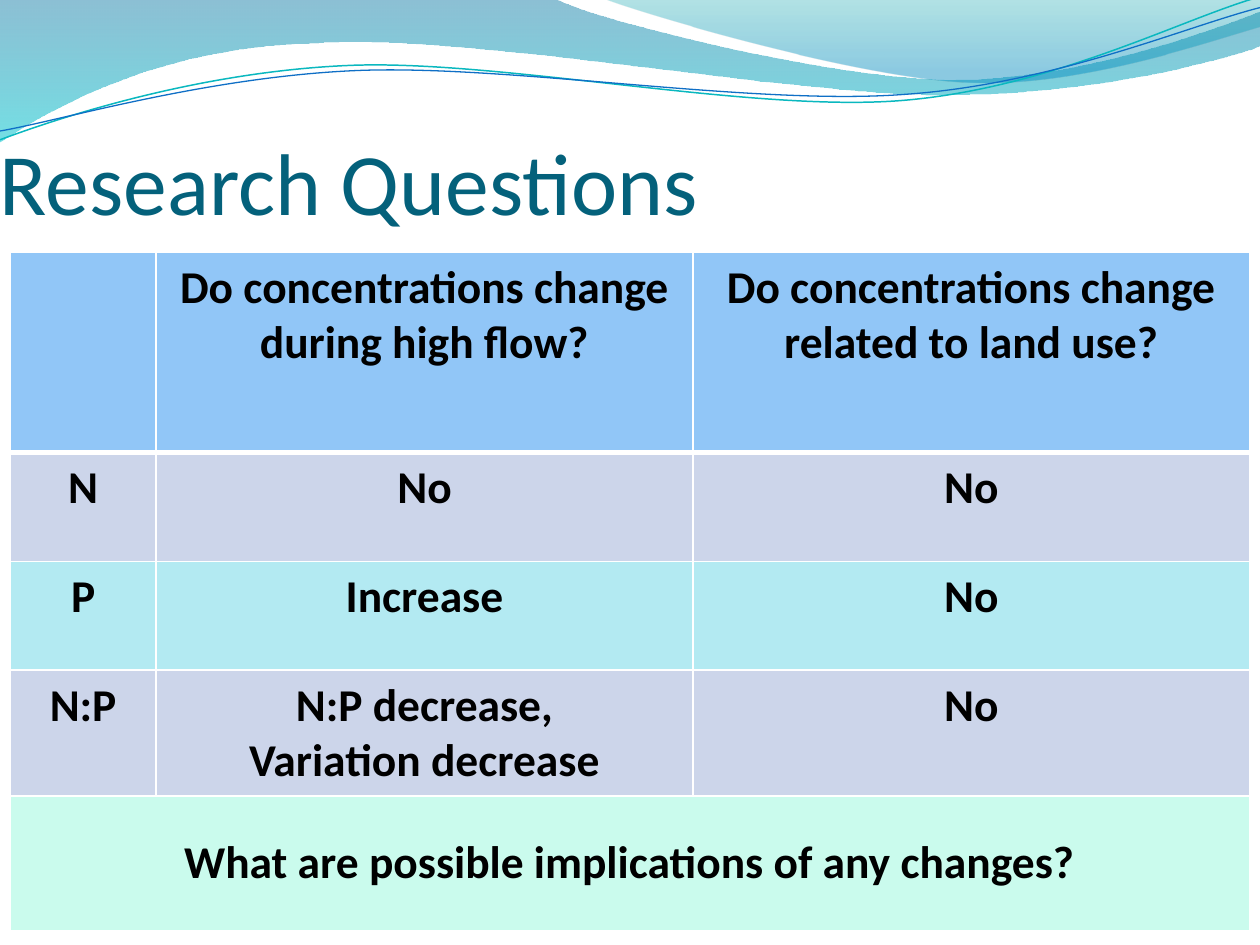
import math
from dataclasses import dataclass
from typing import Optional

from lxml import etree
from pptx import Presentation
from pptx import util as u
from pptx.dml.color import RGBColor
from pptx.enum import text
from pptx.oxml.ns import qn

W, H = u.Inches(10), u.Inches(7.5)


def px(share: float) -> int:
    """Percent of the slide's width."""
    return round(W * share / 100)


def py(share: float) -> int:
    """Percent of the slide's height."""
    return round(H * share / 100)


def rgb(value: str) -> RGBColor:
    return RGBColor.from_string(value)


@dataclass
class Stop:
    position: float
    color: str
    alpha: int


@dataclass
class Wave:
    """Box and points in inches: 2 numbers make a line, 6 a Bézier curve."""
    box: tuple
    start: tuple
    segments: list
    stops: tuple = ()
    line: Optional[str] = None
    width: float = 0
    tilt: float = 0


@dataclass
class Row:
    height: float
    fill: str
    texts: tuple
    bottom: float = 1


WAVES = [
    Wave((-0.01, -0.01, 10.02, 1.14), (0, 0),
         [(4.4, -0.01), (4.76, 0.17, 6.64, 0.63, 7.58, 0.63),
          (8.53, 0.63, 9.58, 0.26, 10, 0.09), (10.01, 0.36),
          (9.83, 0.44, 8.7, 0.76, 7.46, 0.75),
          (6.22, 0.75, 3.82, 0.28, 2.57, 0.34),
          (1.29, 0.36, 0.46, 0.83, -0.01, 1.13), (0, 0)],
         stops=(Stop(0, "0074A1", 45), Stop(1, "00C6CF", 55))),
    Wave((4.79, -0.01, 5.21, 0.7), (4.79, -0.01),
         [(5.09, 0.11, 6.82, 0.62, 7.69, 0.65),
          (8.56, 0.69, 9.61, 0.32, 10, 0.21), (10, 0), (4.79, -0.01)],
         stops=(Stop(0, "00A1A9", 30), Stop(0.8, "008BBF", 45))),
    Wave((-0.02, 0.22, 10.02, 0.71), (0, 1.11),
         [(0.48, 0.93, 1.58, 0.57, 2.77, 0.52),
          (3.95, 0.47, 5.93, 0.89, 7.13, 0.8),
          (8.33, 0.71, 9.38, 0.15, 9.98, -0.02)],
         line="0AB8BF", width=0.85, tilt=-2.7),
    Wave((-0.02, 0.3, 10.03, 0.58), (0, 1.04),
         [(0.47, 0.96, 1.64, 0.61, 2.83, 0.56),
          (4.03, 0.51, 5.97, 0.84, 7.17, 0.75),
          (8.36, 0.67, 9.41, 0.21, 10, 0.06)],
         line="0F6FC6", width=0.75, tilt=-2.7),
]

COLUMNS = (11.6, 42.6, 44.2)  # percent of the width
ROWS = [
    Row(21.2, "91C6F7", ("", "Do concentrations change during high flow?",
                         "Do concentrations change related to land use?"), 3),
    Row(11.53, "CCD5EA", ("N", "No", "No")),
    Row(11.53, "B3EAF2", ("P", "Increase", "No")),
    Row(13.33, "CCD5EA", ("N:P", "N:P decrease,\nVariation decrease", "No")),
    Row(14.2, "CAFBED", ("What are possible implications of any changes?",)),
]
TITLE_FONT = dict(name="Calibri", size=u.Pt(50))
CELL_FONT = dict(name="Calibri", size=u.Pt(26), bold=True)


def set_all(target, values: dict) -> None:
    for name, value in values.items():
        setattr(target, name, value)


def local_point(wave: Wave, x: float, y: float) -> tuple:
    """Place a slide point in the wave's box, before the box is tilted."""
    left, top, width, height = wave.box
    dx, dy = x - left - width / 2, y - top - height / 2
    sin, cos = math.sin(math.radians(-wave.tilt)), math.cos(math.radians(wave.tilt))
    return (u.Inches(dx * cos - dy * sin + width / 2),
            u.Inches(dx * sin + dy * cos + height / 2))


def add_command(outline, tag: str, wave: Wave, numbers: tuple) -> None:
    command = etree.SubElement(outline, qn(f"a:{tag}"))
    for x, y in zip(numbers[::2], numbers[1::2]):
        lx, ly = local_point(wave, x, y)
        etree.SubElement(command, qn("a:pt"), x=str(lx), y=str(ly))


def add_outline(s, wave: Wave):
    builder = s.shapes.build_freeform()
    builder.add_line_segments([(W, H)], close=False)
    sp = builder.convert_to_shape()
    box = dict(zip(("left", "top", "width", "height"), map(u.Inches, wave.box)))
    set_all(sp, dict(box, rotation=wave.tilt))
    # Real curves in place of the straight segment
    outline = next(sp.element.iter(qn("a:path")))
    for child in list(outline):
        outline.remove(child)
    outline.set("w", str(box["width"]))
    outline.set("h", str(box["height"]))
    add_command(outline, "moveTo", wave, wave.start)
    for seg in wave.segments:
        add_command(outline, "lnTo" if len(seg) == 2 else "cubicBezTo", wave, seg)
    if wave.stops:
        etree.SubElement(outline, qn("a:close"))
    return sp


def draw_wave(s, wave: Wave) -> None:
    sp = add_outline(s, wave)
    sp.shadow.inherit = False
    if wave.line:
        sp.fill.background()
        sp.line.color.rgb = rgb(wave.line)
        sp.line.width = u.Pt(wave.width)
        return
    sp.line.fill.background()
    sp.fill.gradient()
    sp.fill.gradient_angle = 270
    for grad, stop in zip(sp.fill.gradient_stops, wave.stops):
        grad.position = stop.position
        grad.color.rgb = rgb(stop.color)
    for clr, stop in zip(sp.element.spPr.iter(qn("a:srgbClr")), wave.stops):
        etree.SubElement(clr, qn("a:alpha"), val=str(stop.alpha * 1000))


def write(tf, content: str, font: dict, color: str, align) -> None:
    tf.text = content
    for p in tf.paragraphs:
        p.alignment = align
        for r in p.runs:
            set_all(r.font, font)
            r.font.color.rgb = rgb(color)


def set_borders(cell, top: float, bottom: float) -> None:
    pr = cell._tc.get_or_add_tcPr()
    for i, (side, width) in enumerate(dict(L=1, R=1, T=top, B=bottom).items()):
        ln = etree.Element(qn(f"a:ln{side}"), w=str(u.Pt(width)))
        solid = etree.SubElement(ln, qn("a:solidFill"))
        etree.SubElement(solid, qn("a:srgbClr"), val="FFFFFF")
        pr.insert(i, ln)


def draw_title(s) -> None:
    tf = s.shapes.add_textbox(0, py(11.07), px(56.7), py(13.6)).text_frame
    set_all(tf, dict(word_wrap=True, vertical_anchor=text.MSO_ANCHOR.BOTTOM,
                     margin_left=0, margin_right=0, margin_bottom=0,
                     margin_top=u.Inches(0.05)))
    write(tf, "Research Questions", TITLE_FONT, "04617B", text.PP_ALIGN.LEFT)


def draw_table(s) -> None:
    table = s.shapes.add_table(len(ROWS), len(COLUMNS), px(0.8), py(26.67),
                               px(sum(COLUMNS)),
                               py(sum(row.height for row in ROWS))).table
    for column, share in zip(table.columns, COLUMNS):
        column.width = px(share)
    above = 1
    for i, row in enumerate(ROWS):
        table.rows[i].height = py(row.height)
        for j in range(len(COLUMNS)):
            cell = table.cell(i, j)
            cell.fill.solid()
            cell.fill.fore_color.rgb = rgb(row.fill)
            set_all(cell, dict(margin_left=u.Inches(0.12), margin_right=u.Inches(0.12),
                               margin_top=u.Inches(0.06), margin_bottom=u.Inches(0.06)))
            set_borders(cell, above, row.bottom)
            if j < len(row.texts) and row.texts[j]:
                write(cell.text_frame, row.texts[j], CELL_FONT, "000000",
                      text.PP_ALIGN.CENTER)
        above = row.bottom
    # Closing question spans the whole last row
    question = table.cell(len(ROWS) - 1, 0)
    question.merge(table.cell(len(ROWS) - 1, len(COLUMNS) - 1))
    question.vertical_anchor = text.MSO_ANCHOR.MIDDLE


prs = Presentation()
set_all(prs, dict(slide_width=W, slide_height=H))
s = prs.slides.add_slide(prs.slide_layouts[6])
for wave in WAVES:  # header, back to front
    draw_wave(s, wave)
draw_title(s)
draw_table(s)
prs.save("out.pptx")
